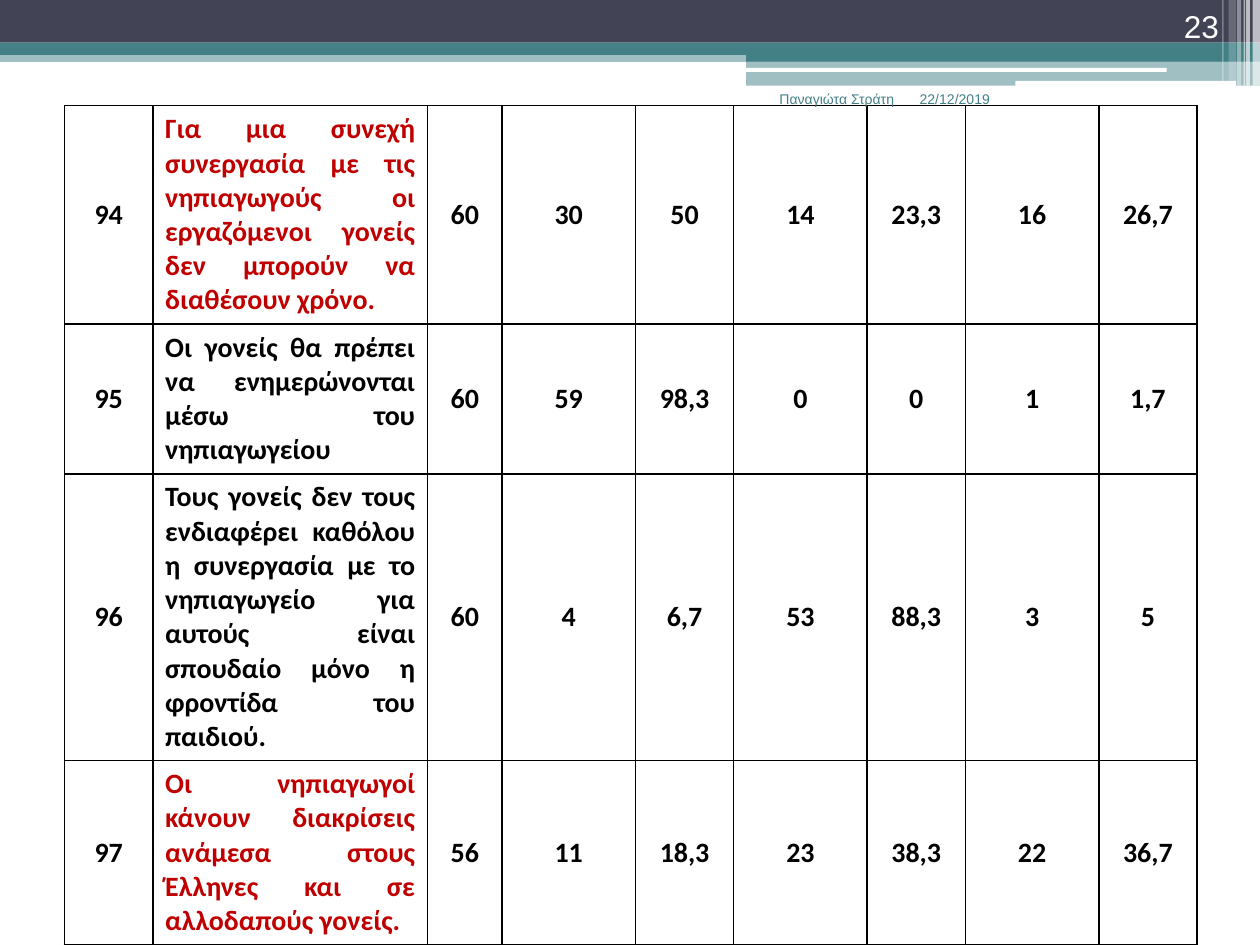
from lxml import etree
from pptx import Presentation
from pptx.dml.color import RGBColor
from pptx.enum.shapes import MSO_SHAPE
from pptx.enum.text import MSO_ANCHOR, PP_ALIGN
from pptx.oxml.ns import qn
from pptx.util import Cm, Pt

RECT, ROUND = MSO_SHAPE.RECTANGLE, MSO_SHAPE.ROUNDED_RECTANGLE
TOP, MIDDLE, BOTTOM = MSO_ANCHOR.TOP, MSO_ANCHOR.MIDDLE, MSO_ANCHOR.BOTTOM
LEFT, CENTER, RIGHT, JUSTIFY = PP_ALIGN.LEFT, PP_ALIGN.CENTER, PP_ALIGN.RIGHT, PP_ALIGN.JUSTIFY

COLORS = {"navy": "424456", "teal": "438086", "white": "FFFFFF",
          "black": "000000", "red": "C00000"}

ROWS = [
    ("94", "Για μια συνεχή συνεργασία με τις νηπιαγωγούς οι εργαζόμενοι γονείς "
     "δεν μπορούν να διαθέσουν χρόνο.",
     "60", "30", "50", "14", "23,3", "16", "26,7"),
    ("95", "Οι γονείς θα πρέπει να ενημερώνονται μέσω του νηπιαγωγείου",
     "60", "59", "98,3", "0", "0", "1", "1,7"),
    ("96", "Τους γονείς δεν τους ενδιαφέρει καθόλου η συνεργασία με το νηπιαγωγείο "
     "για αυτούς είναι σπουδαίο μόνο η φροντίδα του παιδιού.",
     "60", "4", "6,7", "53", "88,3", "3", "5"),
    ("97", "Οι νηπιαγωγοί κάνουν διακρίσεις ανάμεσα στους Έλληνες και σε "
     "αλλοδαπούς γονείς.",
     "56", "11", "18,3", "23", "38,3", "22", "36,7"),
]
RED_ROWS = {"94", "97"}
STATEMENT_COL = 1
COL_WIDTHS = [1.78, 5.54, 1.5] + [2.69, 1.98] * 3
ROW_HEIGHTS = [4.32, 2.97, 5.66, 3.63]

BANDS = [
    (RECT, 0, 1.02, 25.4, 0.23, "teal", 50),
    (RECT, 0, 0, 25.4, 0.86, "navy", 100),
    (RECT, 0, 0.86, 25.4, 0.25, "teal", 100),
    (RECT, 15.04, 0.99, 10.36, 0.25, "teal", 100),
    (RECT, 15.04, 1.22, 10.36, 0.51, "teal", 50),
    (ROUND, 15.01, 1.37, 8.51, 0.08, "white", 100),
    (ROUND, 20.47, 1.63, 4.45, 0.1, "white", 100),
]
STRIPES = [(25.25, 0.15, 1.73, 65), (25.12, 0.08, 1.73, 65), (25.07, 0.03, 1.73, 60),
           (24.94, 0.08, 1.73, 40), (24.77, 0.15, 1.63, 20), (24.64, 0.03, 1.63, 30)]

LABELS = [
    ("22/12/2019", 18.29, 1.7, 2.67, 1.27, 8, "teal", LEFT, TOP),
    ("Παναγιώτα Στράτη", 14.6, 1.7, 3.68, 1.27, 8, "teal", RIGHT, TOP),
    ("23", 22.71, 0, 2.11, 1.02, 18, "white", RIGHT, BOTTOM),
]


def rgb(name):
    return RGBColor.from_string(COLORS[name])


def add_band(s, kind, x, y, w, h, color, alpha):
    sp = s.shapes.add_shape(kind, Cm(x), Cm(y), Cm(w), Cm(h))
    sp.shadow.inherit = False
    sp.line.fill.background()
    sp.fill.solid()
    sp.fill.fore_color.rgb = rgb(color)
    if alpha < 100:
        clr = sp.fill._xPr.find(".//" + qn("a:srgbClr"))
        etree.SubElement(clr, qn("a:alpha"), val=str(alpha * 1000))


def write(tf, text, size, font, color, align, bold=False):
    p = tf.paragraphs[0]
    p.alignment = align
    r = p.add_run()
    r.text = text
    r.font.size = Pt(size)
    r.font.name = font
    r.font.bold = bold
    r.font.color.rgb = rgb(color)


def set_borders(cell):
    tcPr = cell._tc.get_or_add_tcPr()
    for i, side in enumerate(("lnL", "lnR", "lnT", "lnB")):
        ln = etree.Element(qn("a:" + side), w=str(Pt(1)))
        fill = etree.SubElement(ln, qn("a:solidFill"))
        etree.SubElement(fill, qn("a:srgbClr"), val=COLORS["black"])
        tcPr.insert(i, ln)


def add_results(s):
    frame = s.shapes.add_table(len(ROWS), len(COL_WIDTHS), Cm(1.3), Cm(2.13),
                               Cm(sum(COL_WIDTHS)), Cm(sum(ROW_HEIGHTS)))
    table = frame.table
    table.first_row = table.horz_banding = False
    for col, width in zip(table.columns, COL_WIDTHS):
        col.width = Cm(width)
    for row, height, values in zip(table.rows, ROW_HEIGHTS, ROWS):
        row.height = Cm(height)
        for c, (cell, value) in enumerate(zip(row.cells, values)):
            statement = c == STATEMENT_COL
            color = "red" if statement and values[0] in RED_ROWS else "black"
            cell.margin_left = cell.margin_right = Cm(0.25)
            cell.margin_top = cell.margin_bottom = Cm(0.13)
            cell.vertical_anchor = TOP if statement else MIDDLE
            cell.fill.solid()
            cell.fill.fore_color.rgb = rgb("white")
            set_borders(cell)
            write(cell.text_frame, value, 16, "Calibri", color,
                  JUSTIFY if statement else CENTER, True)


def main():
    prs = Presentation()
    prs.slide_width, prs.slide_height = Cm(25.4), Cm(19.05)
    s = prs.slides.add_slide(prs.slide_layouts[6])
    for band in BANDS:
        add_band(s, *band)
    for x, w, h, alpha in STRIPES:
        add_band(s, RECT, x, 0, w, h, "white", alpha)
    add_results(s)
    for text, x, y, w, h, size, color, align, anchor in LABELS:
        tf = s.shapes.add_textbox(Cm(x), Cm(y), Cm(w), Cm(h)).text_frame
        tf.word_wrap = True
        tf.vertical_anchor = anchor
        write(tf, text, size, "Arial", color, align)
    prs.save("out.pptx")


if __name__ == "__main__":
    main()
